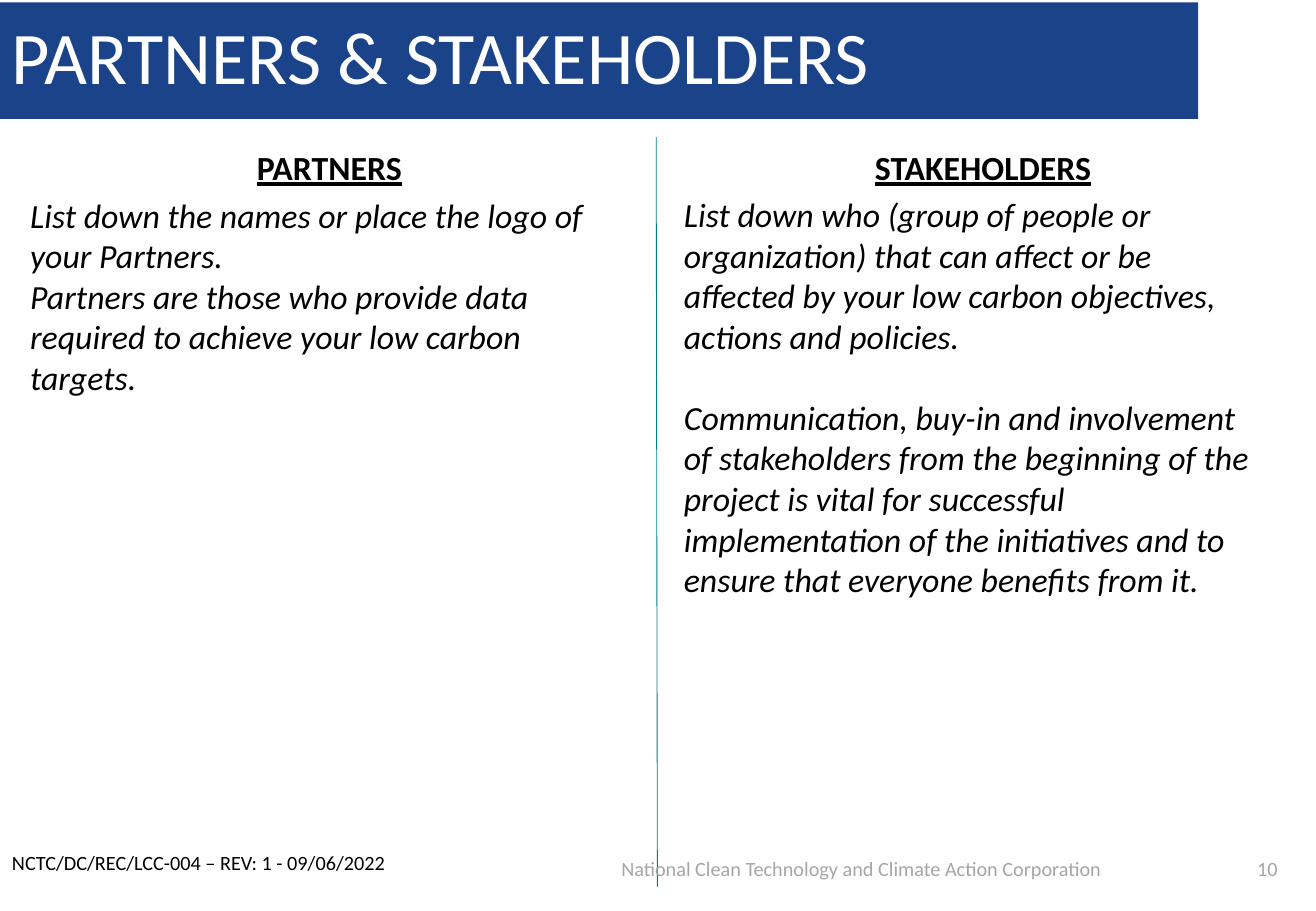
from lxml.etree import SubElement
from pptx import Presentation
from pptx.dml.color import RGBColor
from pptx.enum.shapes import MSO_CONNECTOR, MSO_SHAPE
from pptx.enum.text import MSO_ANCHOR, PP_ALIGN
from pptx.oxml.ns import qn
from pptx.util import Inches, Pt

BLUE = RGBColor(0x1B, 0x43, 0x89)
TEAL = RGBColor(0x00, 0x7D, 0x83)
GREY = RGBColor(0xA6, 0xA6, 0xA6)
BLACK = RGBColor(0, 0, 0)
WHITE = RGBColor(0xFF, 0xFF, 0xFF)

PARTNERS = [
    "List down the names or place the logo of your Partners.",
    "Partners are those who provide data required to achieve your low carbon targets.",
]
STAKEHOLDERS = [
    "List down who (group of people or organization) that can affect or be affected "
    "by your low carbon objectives, actions and policies.",
    "Communication, buy-in and involvement of stakeholders from the beginning of the "
    "project is vital for successful implementation of the initiatives and to ensure "
    "that everyone benefits from it.",
]


def write(tf, lines, size, color=BLACK, align=PP_ALIGN.LEFT, anchor=MSO_ANCHOR.TOP,
          gap=0, bold=False, italic=False, underline=False):
    """Fill a text frame with one paragraph per line, gap points apart."""
    tf.word_wrap = True
    tf.vertical_anchor = anchor
    tf.text = "\n".join(lines)
    for i, p in enumerate(tf.paragraphs):
        p.alignment = align
        p.space_before = Pt(gap if i else 0)
        for r in p.runs:
            font = r.font
            font.name, font.size, font.color.rgb = "Calibri", Pt(size), color
            font.bold, font.italic, font.underline = bold, italic, underline


def add_text(s, x, y, w, h, lines, size, **style):
    box = s.shapes.add_textbox(Inches(x), Inches(y), Inches(w), Inches(h))
    write(box.text_frame, lines, size, **style)


def add_title(s, x, y, w, h, text):
    sp = s.shapes.add_shape(MSO_SHAPE.RECTANGLE, Inches(x), Inches(y), Inches(w), Inches(h))
    sp.shadow.inherit = False
    sp.fill.solid()
    sp.fill.fore_color.rgb = BLUE
    sp.line.fill.background()
    write(sp.text_frame, [text], 44, color=WHITE, anchor=MSO_ANCHOR.MIDDLE)
    sp.text_frame.paragraphs[0].line_spacing = 0.9


def add_column(s, x, y, w, h, heading, lines, gap=0):
    add_text(s, x, y, w, 0.44, [heading], 20, align=PP_ALIGN.CENTER,
             bold=True, underline=True)
    add_text(s, x + 0.05, y + 0.39, w - 0.22, h - 0.39, lines, 20, gap=gap, italic=True)


def add_divider(s, x, y, h):
    line = s.shapes.add_connector(MSO_CONNECTOR.STRAIGHT, Inches(x), Inches(y),
                                  Inches(x + 0.01), Inches(y + h))
    line.line.color.rgb = TEAL
    line.line.width = Pt(0.5)
    SubElement(line._element.spPr, qn("a:effectLst"))


def add_footer(s, y, h):
    grey = dict(color=GREY, align=PP_ALIGN.CENTER, anchor=MSO_ANCHOR.MIDDLE)
    add_text(s, 4.24, y, 5.7, h,
             ["National Clean Technology and Climate Action Corporation"], 12, **grey)
    add_text(s, 10.09, y, 0.68, h, ["10"], 12, **grey)
    add_text(s, 0, y, 3.89, h, ["NCTC/DC/REC/LCC-004 – REV: 1 - 09/06/2022"], 12)


def main():
    prs = Presentation()
    prs.slide_width, prs.slide_height = Inches(10.83), Inches(7.5)
    s = prs.slides.add_slide(prs.slide_layouts[6])
    add_title(s, 0, 0.02, 9.86, 0.96, "PARTNERS & STAKEHOLDERS")
    add_column(s, 0.1, 1.16, 5.22, 2.17, "PARTNERS", PARTNERS)
    add_column(s, 5.48, 1.16, 5.22, 3.86, "STAKEHOLDERS", STAKEHOLDERS, gap=24)
    add_divider(s, 5.4, 1.13, 6.17)
    add_footer(s, 6.95, 0.4)
    prs.save("out.pptx")


if __name__ == "__main__":
    main()
